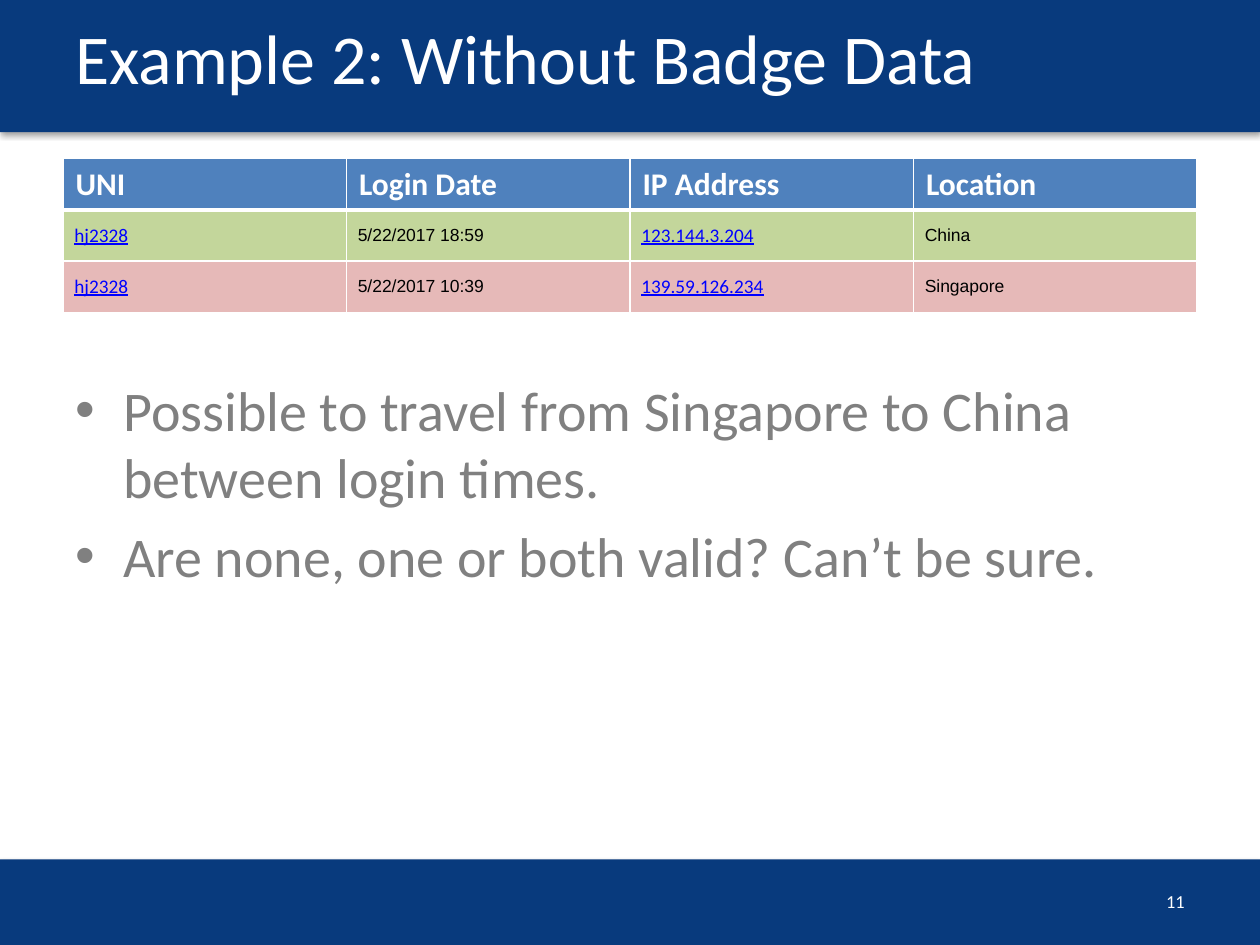
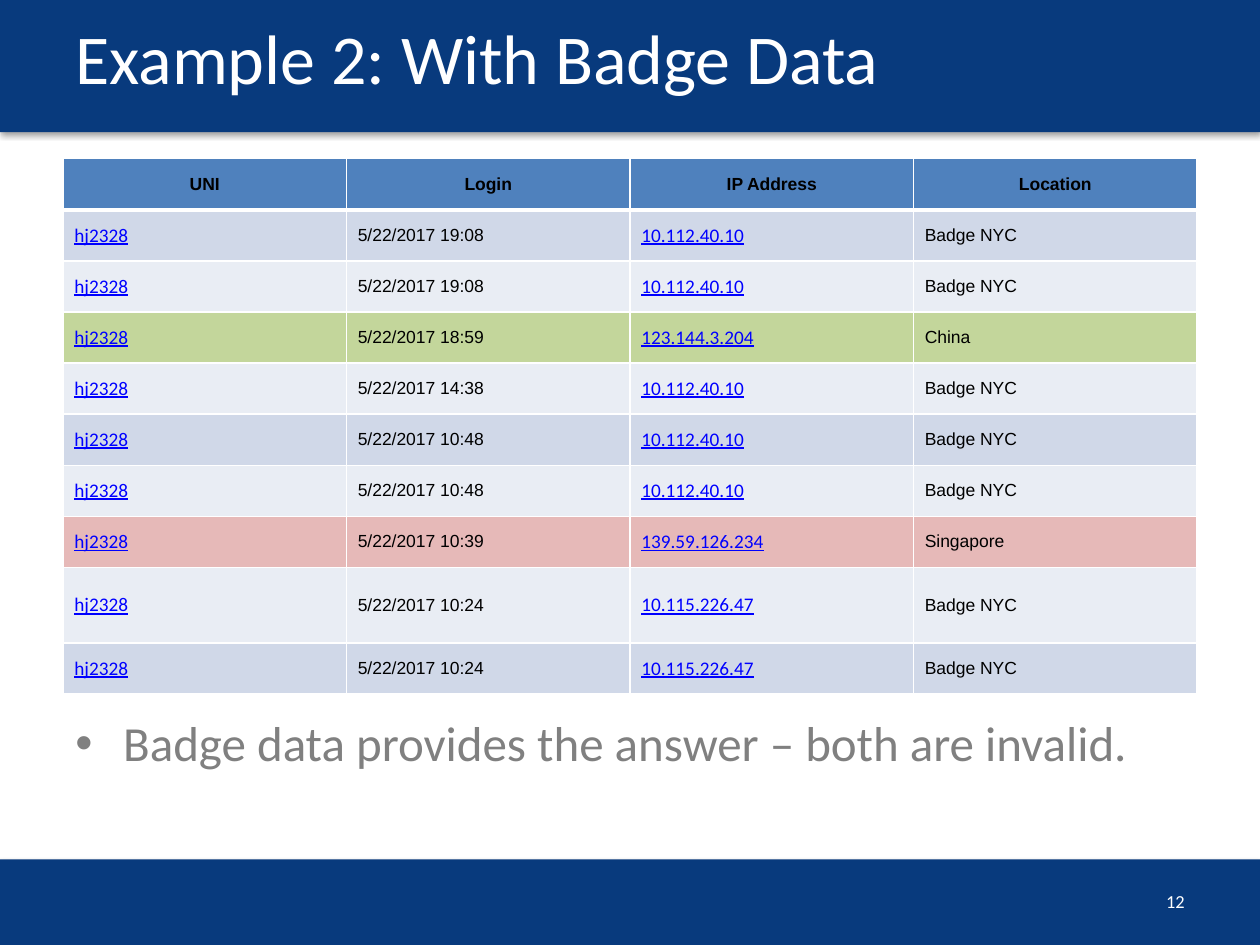
"""Build two slides that judge a login pair without and with badge data."""
import dataclasses
import typing

import lxml.etree
import pptx
import pptx.dml.color
import pptx.enum.shapes
import pptx.enum.text
import pptx.oxml.ns
import pptx.util

Inches = pptx.util.Inches
Pt = pptx.util.Pt
qn = pptx.oxml.ns.qn
Align = pptx.enum.text.PP_ALIGN
Anchor = pptx.enum.text.MSO_ANCHOR


@dataclasses.dataclass(frozen=True)
class TextStyle:
    name: str
    size: float
    color: str
    bold: bool = False
    underline: bool = False


@dataclasses.dataclass(frozen=True)
class Theme:
    navy: str = "083A7D"
    white: str = "FFFFFF"
    header: str = "4F81BD"
    china: str = "C3D69B"
    singapore: str = "E6B9B8"
    stripes: tuple[str, str] = ("D0D8E8", "E9EDF4")
    title: TextStyle = TextStyle("Calibri", 40, "FFFFFF")
    number: TextStyle = TextStyle("Calibri", 10.5, "FFFFFF")
    body: TextStyle = TextStyle("Calibri", 32, "808080")
    conclusion: TextStyle = TextStyle("Calibri", 28, "808080")
    large_header: TextStyle = TextStyle("Calibri", 18, "FFFFFF", bold=True)
    small_header: TextStyle = TextStyle("Arial", 10, "000000", bold=True)
    link: TextStyle = TextStyle("Calibri", 11, "0000FF", underline=True)
    cell: TextStyle = TextStyle("Arial", 10, "000000")


THEME = Theme()
PLACE_FILLS = {"China": THEME.china, "Singapore": THEME.singapore}


class Area(typing.NamedTuple):
    left: float
    top: float
    width: float
    height: float

    def lengths(self) -> list[int]:
        return [Inches(value) for value in self]


class Login(typing.NamedTuple):
    time: str
    address: str
    place: str
    user: str = "hj2328"

    def cells(self) -> list[tuple[str, TextStyle]]:
        return [(self.user, THEME.link), (f"5/22/2017 {self.time}", THEME.cell),
                (self.address, THEME.link), (self.place, THEME.cell)]


@dataclasses.dataclass(frozen=True)
class LoginTable:
    headings: list[str]
    heading_style: TextStyle
    compact_header: bool
    logins: list[Login]
    height: float
    tall_rows: dict[int, float] = dataclasses.field(default_factory=dict)


@dataclasses.dataclass(frozen=True)
class LoginPage:
    number: int
    title: str
    table: LoginTable
    points: list[str]
    points_area: Area
    points_style: TextStyle
    line_spacing: float = 1.0


BANDS = [Area(0, -0.01, 10, 1.06), Area(0, 6.82, 10, 0.7)]
TITLE_AREA = Area(0.5, 0.01, 9, 0.88)
NUMBER_AREA = Area(7.17, 6.95, 2.33, 0.4)
TABLE_LEFT, TABLE_TOP, TABLE_WIDTH = 0.5, 1.26, 9
BULLET_INDENT = 0.38

CHINA_LOGIN = Login("18:59", "123.144.3.204", "China")
SINGAPORE_LOGIN = Login("10:39", "139.59.126.234", "Singapore")
BADGE = "Badge NYC"
OFFICE, ANNEX = "10.112.40.10", "10.115.226.47"

PAGES = [
    LoginPage(
        11, "Example 2: Without Badge Data",
        LoginTable(["UNI", "Login Date", "IP Address", "Location"],
                   THEME.large_header, False, [CHINA_LOGIN, SINGAPORE_LOGIN], 1.22),
        ["Possible to travel from Singapore to China between login times.",
         "Are none, one or both valid? Can’t be sure."],
        Area(0.5, 2.93, 9.07, 1.82), THEME.body),
    LoginPage(
        12, "Example 2: With Badge Data",
        LoginTable(["UNI", "Login", "IP Address", "Location"],
                   THEME.small_header, True,
                   [Login("19:08", OFFICE, BADGE), Login("19:08", OFFICE, BADGE),
                    CHINA_LOGIN, Login("14:38", OFFICE, BADGE),
                    Login("10:48", OFFICE, BADGE), Login("10:48", OFFICE, BADGE),
                    SINGAPORE_LOGIN, Login("10:24", ANNEX, BADGE),
                    Login("10:24", ANNEX, BADGE)], 4.25, {8: 0.6}),
        ["Badge data provides the answer – both are invalid."],
        Area(0.5, 5.66, 9, 0.53), THEME.conclusion, 0.9),
]


def rgb(color: str) -> pptx.dml.color.RGBColor:
    return pptx.dml.color.RGBColor.from_string(color)


def assign(target: typing.Any, values: dict[str, typing.Any]) -> None:
    for name, value in values.items():
        setattr(target, name, value)


def add_element(parent: typing.Any, tag: str, **attributes: object) -> typing.Any:
    texts = {name: str(value) for name, value in attributes.items()}
    return lxml.etree.SubElement(parent, qn(tag), texts)


def write(para: typing.Any, text: str, style: TextStyle) -> None:
    span = para.add_run()
    span.text = text
    assign(span.font, {"name": style.name, "size": Pt(style.size),
                       "bold": style.bold, "underline": style.underline})
    span.font.color.rgb = rgb(style.color)


def add_band(page: typing.Any, area: Area) -> None:
    band = page.shapes.add_shape(pptx.enum.shapes.MSO_SHAPE.RECTANGLE, *area.lengths())
    band.fill.solid()
    band.fill.fore_color.rgb = rgb(THEME.navy)
    band.line.fill.background()
    effects = add_element(band._element.spPr, "a:effectLst")
    shadow = add_element(effects, "a:outerShdw", blurRad=Pt(3.1), dist=Pt(1.8),
                         dir=90 * 60000, rotWithShape=0)
    shade = add_element(shadow, "a:srgbClr", val="000000")
    add_element(shade, "a:alpha", val=35000)


def add_text_box(page: typing.Any, area: Area, anchor: Anchor) -> typing.Any:
    frame = page.shapes.add_textbox(*area.lengths()).text_frame
    assign(frame, {"word_wrap": True, "vertical_anchor": anchor})
    return frame


def add_label(page: typing.Any, area: Area, text: str, style: TextStyle,
              alignment: Align) -> None:
    para = add_text_box(page, area, Anchor.MIDDLE).paragraphs[0]
    para.alignment = alignment
    write(para, text, style)


def add_points(page: typing.Any, content: LoginPage) -> None:
    frame = add_text_box(page, content.points_area, Anchor.TOP)
    style = content.points_style
    for index, text in enumerate(content.points):
        para = frame.add_paragraph() if index else frame.paragraphs[0]
        properties = para._p.get_or_add_pPr()
        properties.set("marL", str(Inches(BULLET_INDENT)))
        properties.set("indent", str(-Inches(BULLET_INDENT)))
        add_element(properties, "a:buFont", typeface="Arial")
        add_element(properties, "a:buChar", char="•")
        assign(para, {"line_spacing": content.line_spacing,
                      "space_before": Pt(style.size * 0.2 if index else 0)})
        write(para, text, style)


def draw_borders(cell: typing.Any, row: int) -> None:
    widths = {"L": 1, "R": 1, "T": 3 if row == 1 else 1, "B": 3 if row == 0 else 1}
    properties = cell._tc.get_or_add_tcPr()
    for side, width in widths.items():
        border = add_element(properties, f"a:ln{side}", w=Pt(width))
        add_element(add_element(border, "a:solidFill"), "a:srgbClr", val=THEME.white)


def fill_cell(cell: typing.Any, row: int, text: str, style: TextStyle, color: str,
              values: dict[str, typing.Any], alignment: Align) -> None:
    assign(cell, values)
    draw_borders(cell, row)
    cell.fill.solid()
    cell.fill.fore_color.rgb = rgb(color)
    para = cell.text_frame.paragraphs[0]
    para.alignment = alignment
    write(para, text, style)


def tight_cell(left: float) -> dict[str, typing.Any]:
    return {"margin_left": Inches(left), "margin_right": Inches(0.01),
            "margin_top": Inches(0.01), "margin_bottom": Inches(0.01),
            "vertical_anchor": Anchor.MIDDLE}


def add_login_table(page: typing.Any, content: LoginTable) -> None:
    row_count, column_count = len(content.logins) + 1, len(content.headings)
    area = Area(TABLE_LEFT, TABLE_TOP, TABLE_WIDTH, content.height)
    table = page.shapes.add_table(row_count, column_count, *area.lengths()).table
    table.horz_banding = False
    tall = content.tall_rows
    usual = (content.height - sum(tall.values())) / (row_count - len(tall))
    for index, row in enumerate(table.rows):
        row.height = Inches(tall.get(index, usual))
    header_values = tight_cell(0.01) if content.compact_header else {}
    header_alignment = Align.CENTER if content.compact_header else Align.LEFT
    for column, heading in enumerate(content.headings):
        fill_cell(table.cell(0, column), 0, heading, content.heading_style,
                  THEME.header, header_values, header_alignment)
    for row, login in enumerate(content.logins, 1):
        color = PLACE_FILLS.get(login.place, THEME.stripes[(row - 1) % 2])
        for column, (text, style) in enumerate(login.cells()):
            fill_cell(table.cell(row, column), row, text, style, color,
                      tight_cell(0.09), Align.LEFT)


def add_page(deck: typing.Any, content: LoginPage) -> None:
    page = deck.slides.add_slide(deck.slide_layouts[6])
    for band in BANDS:
        add_band(page, band)
    add_label(page, TITLE_AREA, content.title, THEME.title, Align.LEFT)
    add_login_table(page, content.table)
    add_label(page, NUMBER_AREA, str(content.number), THEME.number, Align.RIGHT)
    add_points(page, content)


def main() -> None:
    deck = pptx.Presentation()
    assign(deck, {"slide_width": Inches(10), "slide_height": Inches(7.5)})
    for content in PAGES:
        add_page(deck, content)
    deck.save("out.pptx")


if __name__ == "__main__":
    main()
